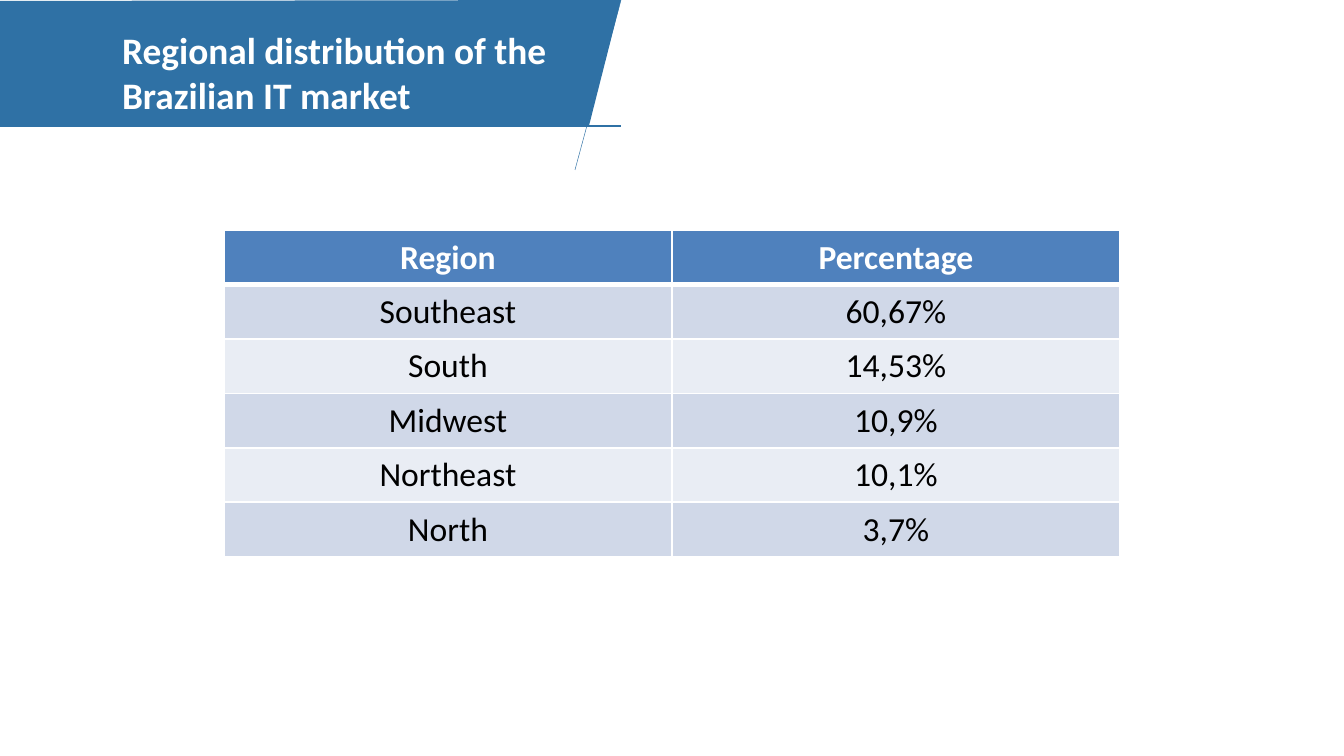
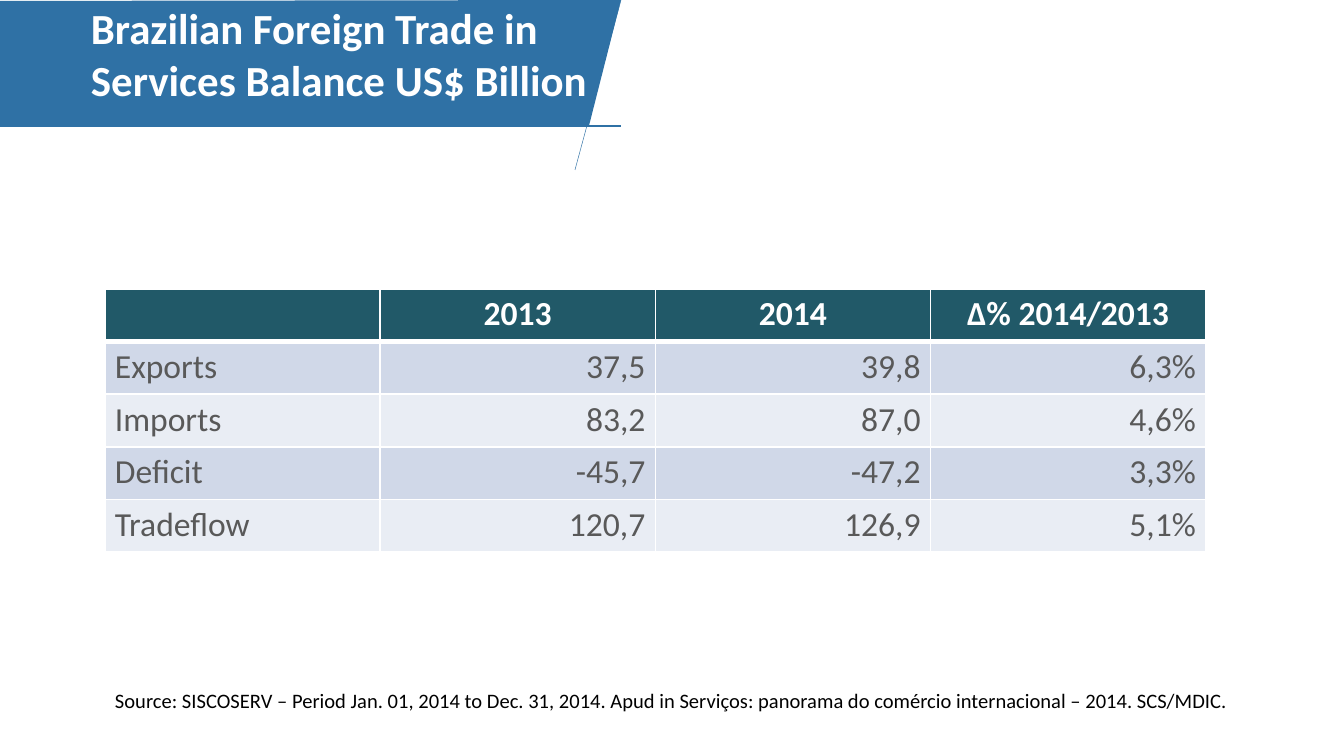
from pptx import Presentation
from pptx.dml.color import RGBColor
from pptx.enum.shapes import MSO_CONNECTOR
from pptx.enum.text import MSO_ANCHOR, PP_ALIGN
from pptx.oxml import parse_xml
from pptx.oxml.ns import nsdecls
from pptx.util import Pt
from lxml import etree

EMU_PER_PX = 914400 / 134.4
FONT = "Calibri"
WHITE, BLACK, GREY, BAND_BLUE = "FFFFFF", "000000", "595959", "2F71A5"
ROW_FILLS = ["E9EDF4", "D0D8E8"]
LEFT, CENTER, RIGHT = PP_ALIGN.LEFT, PP_ALIGN.CENTER, PP_ALIGN.RIGHT
hex_color = RGBColor.from_string


def px(length):
    return round(length * EMU_PER_PX)


def write(paragraph, text, size, color, bold=False, align=LEFT):
    paragraph.text = text
    paragraph.alignment = align
    for run in paragraph.runs:
        run.font.name = FONT
        run.font.size = Pt(size)
        run.font.bold = bold
        run.font.color.rgb = hex_color(color)


# Text boxes: text, place, size, colour, bold, insets (left, top, right, bottom), anchor
# Tables: place, header fill, body colour, alignment per column, cell insets, rows
NARROW = (10, 5, 10, 5)
WIDE = (13, 7, 13, 7)
pages = [
    {
        "texts": [
            ("Regional distribution of the Brazilian IT market", (109, 8, 542, 98),
             20, WHITE, True, (13, 30, 13, 0), MSO_ANCHOR.MIDDLE),
        ],
        "table": ((224, 230, 896, 327), "4F81BD", BLACK, [CENTER, CENTER], WIDE, [
            ["Region", "Percentage"],
            ["Southeast", "60,67%"],
            ["South", "14,53%"],
            ["Midwest", "10,9%"],
            ["Northeast", "10,1%"],
            ["North", "3,7%"],
        ]),
    },
    {
        "texts": [
            ("Brazilian Foreign Trade in\nServices Balance US$ Billion", (81, -3, 654, 114),
             23, WHITE, True, NARROW, MSO_ANCHOR.TOP),
            ("Source: SISCOSERV – Period Jan. 01, 2014 to Dec. 31, 2014. Apud in Serviços: "
             "panorama do comércio internacional – 2014. SCS/MDIC.", (105, 683, 1204, 35),
             11, BLACK, False, NARROW, MSO_ANCHOR.TOP),
        ],
        "table": ((105, 289, 1101, 263), "215968", GREY, [LEFT, RIGHT, RIGHT, RIGHT], NARROW, [
            ["", "2013", "2014", "∆% 2014/2013"],
            ["Exports", "37,5", "39,8", "6,3%"],
            ["Imports", "83,2", "87,0", "4,6%"],
            ["Deficit", "-45,7", "-47,2", "3,3%"],
            ["Tradeflow", "120,7", "126,9", "5,1%"],
        ]),
    },
]

prs = Presentation()
prs.slide_width, prs.slide_height = px(1344), px(756)

for page in pages:
    slide = prs.slides.add_slide(prs.slide_layouts[6])
    shapes = slide.shapes

    # Title band with its two thin lines
    outline = shapes.build_freeform(0, 1, scale=EMU_PER_PX)
    outline.add_line_segments([(621, 0), (589, 126), (0, 126)], close=True)
    band = outline.convert_to_shape()
    band.shadow.inherit = False
    band.fill.solid()
    band.fill.fore_color.rgb = hex_color(BAND_BLUE)
    band.line.fill.background()
    for ends, weight in [((621, 0, 575, 170), 0.25), ((621, 126, 0, 126), 0.75)]:
        edge = shapes.add_connector(MSO_CONNECTOR.STRAIGHT, *map(px, ends))
        edge.line.color.rgb = hex_color(BAND_BLUE)
        edge.line.width = Pt(weight)
        etree.SubElement(edge._element.spPr,
                         "{http://schemas.openxmlformats.org/drawingml/2006/main}effectLst")

    # Title and source note
    for text, place, size, color, bold, insets, anchor in page["texts"]:
        frame = shapes.add_textbox(*map(px, place)).text_frame
        frame.word_wrap = True
        frame.vertical_anchor = anchor
        (frame.margin_left, frame.margin_top,
         frame.margin_right, frame.margin_bottom) = map(px, insets)
        write(frame.paragraphs[0], text, size, color, bold)

    # Table: white rules, heavier under the header, alternating body rows
    place, header_fill, body_color, aligns, insets, rows = page["table"]
    table = shapes.add_table(len(rows), len(aligns), *map(px, place)).table
    for r, row in enumerate(rows):
        is_header = r == 0
        rules = {"L": 1, "R": 1, "T": 3 if r == 1 else 1, "B": 3 if is_header else 1}
        for c, value in enumerate(row):
            cell = table.cell(r, c)
            (cell.margin_left, cell.margin_top,
             cell.margin_right, cell.margin_bottom) = map(px, insets)
            for side, weight in rules.items():
                cell._tc.get_or_add_tcPr().append(parse_xml(
                    f'<a:ln{side} {nsdecls("a")} w="{Pt(weight)}"><a:solidFill>'
                    f'<a:srgbClr val="{WHITE}"/></a:solidFill></a:ln{side}>'))
            cell.fill.solid()
            cell.fill.fore_color.rgb = hex_color(header_fill if is_header else ROW_FILLS[r % 2])
            write(cell.text_frame.paragraphs[0], value, 18,
                  WHITE if is_header else body_color, is_header,
                  CENTER if is_header else aligns[c])

prs.save("out.pptx")
